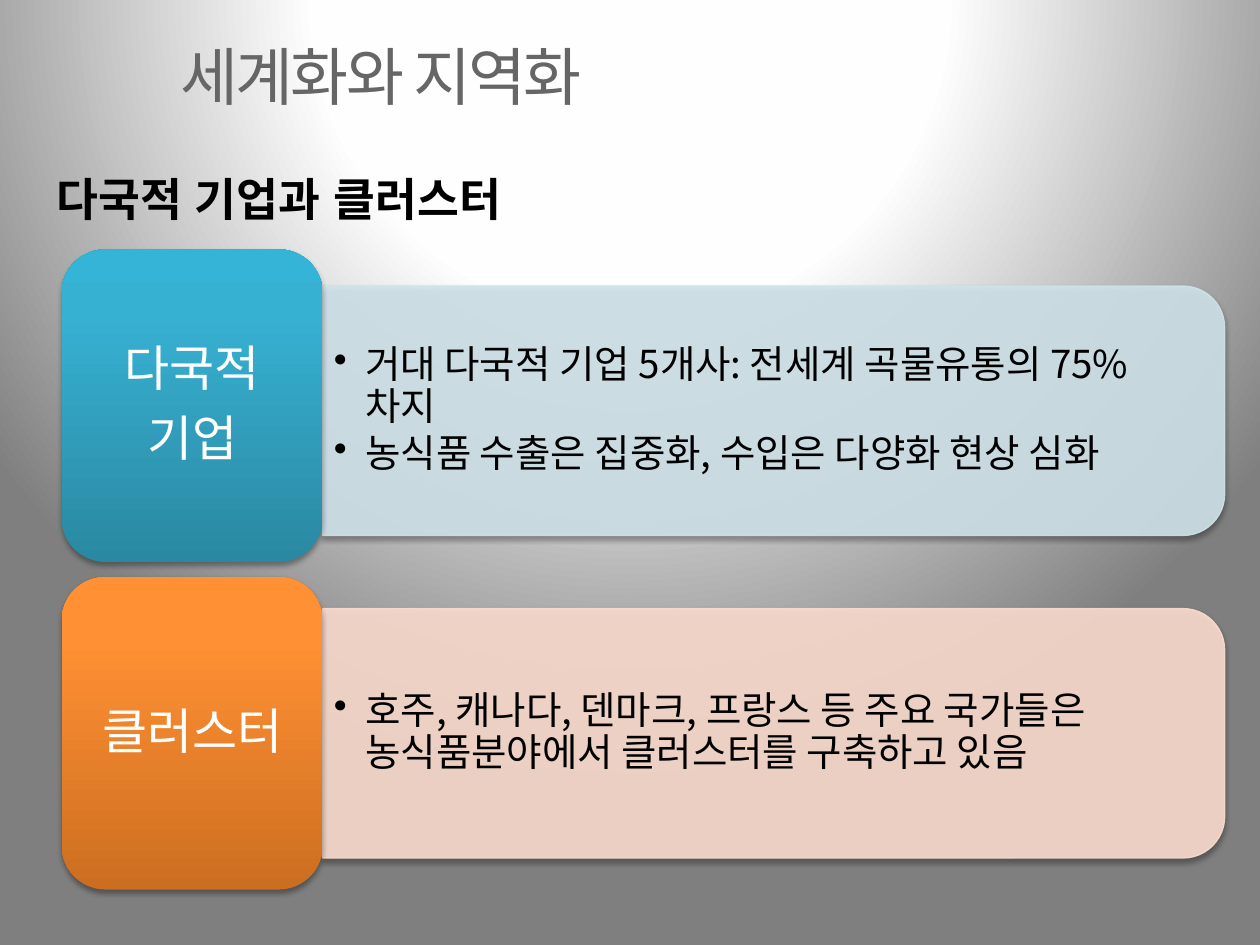
from lxml.etree import SubElement
from pptx import Presentation
from pptx.dml.color import RGBColor
from pptx.enum.shapes import MSO_SHAPE
from pptx.enum.text import MSO_ANCHOR, PP_ALIGN
from pptx.oxml import parse_xml
from pptx.oxml.ns import nsdecls, qn
from pptx.util import Inches, Pt

FONT = "Noto Sans CJK KR"
LABEL_LEFT, LABEL_WIDTH, LABEL_HEIGHT = 0.49, 2.07, 2.48
BAR_LEFT, BAR_WIDTH, BAR_HEIGHT = LABEL_LEFT + LABEL_WIDTH, 7.16, 1.98

# label centre, bar centre, label lines, label gradient, bar colour, bullets
ROWS = [
    (3.22, 3.26, ["다국적", "기업"],
     [(0, "2A88A2"), (80, "37B1D2"), (100, "34B4D6")], "D0E3EA",
     ["거대 다국적 기업 5개사: 전세계 곡물유통의 75% 차지",
      "농식품 수출은 집중화, 수입은 다양화 현상 심화"]),
    (5.82, 5.82, ["클러스터"],
     [(0, "CC6E20"), (80, "FF9034"), (100, "FF9136")], "FCDDCF",
     ["호주, 캐나다, 덴마크, 프랑스 등 주요 국가들은 "
      "농식품분야에서 클러스터를 구축하고 있음"]),
]


def color(value):
    return RGBColor.from_string(value)


def set_gradient(fill, parent, stops, direction):
    """Fill with any number of stops; direction is the a:lin or a:path XML."""
    fill.solid()
    stop_xml = "".join(
        f'<a:gs pos="{position * 1000}"><a:srgbClr val="{value}"/></a:gs>'
        for position, value in stops)
    gradient = parse_xml(
        f'<a:gradFill {nsdecls("a")} rotWithShape="1">'
        f"<a:gsLst>{stop_xml}</a:gsLst>{direction}</a:gradFill>")
    parent.replace(parent.find(qn("a:solidFill")), gradient)


def set_background(slide):
    fill = slide.background.fill
    fill.solid()
    set_gradient(
        fill, slide.element.find(".//" + qn("p:bgPr")),
        [(0, "FFFFFF"), (40, "FEFEFE"), (100, "7F7F7F")],
        '<a:path path="circle"><a:fillToRect l="50000" t="-80000" '
        'r="50000" b="180000"/></a:path>')


def add_shadow(shape):
    shape.shadow.inherit = False
    effects = shape.element.spPr.find(qn("a:effectLst"))
    effects.append(parse_xml(
        f'<a:outerShdw {nsdecls("a")} blurRad="{Pt(3.1)}" dist="{Pt(1.8)}" '
        'dir="5400000" rotWithShape="0"><a:srgbClr val="000000">'
        '<a:alpha val="35000"/></a:srgbClr></a:outerShdw>'))


def format_runs(paragraph, size, value, name=FONT, bold=False):
    for run in paragraph.runs:
        font = run.font
        font.size, font.name, font.bold = Pt(size), name, bold
        font.color.rgb = color(value)
        SubElement(run._r.get_or_add_rPr(), qn("a:ea"), typeface=name)


def add_text(slide, left, top, width, height, lines, size, value,
             name=FONT, bold=False, anchor=MSO_ANCHOR.TOP):
    box = slide.shapes.add_textbox(
        Inches(left), Inches(top), Inches(width), Inches(height))
    frame = box.text_frame
    frame.word_wrap = True
    frame.vertical_anchor = anchor
    frame.text = "\n".join(lines)
    for paragraph in frame.paragraphs:
        format_runs(paragraph, size, value, name, bold)
    return frame


def set_spacing(paragraph, after_percent):
    paragraph.line_spacing = 0.9
    after = SubElement(paragraph._p.get_or_add_pPr(), qn("a:spcAft"))
    SubElement(after, qn("a:spcPct"), val=str(after_percent * 1000))


def add_bullet(paragraph):
    paragraph.level = 1
    properties = paragraph._p.get_or_add_pPr()
    properties.set("marL", str(Inches(0.25)))
    properties.set("indent", str(-Inches(0.25)))
    SubElement(properties, qn("a:buChar"), char="•")


def add_bar(slide, center, value, bullets):
    """Bar rounded at its right end: an upright shape turned by 90 degrees."""
    middle = BAR_LEFT + BAR_WIDTH / 2
    bar = slide.shapes.add_shape(
        MSO_SHAPE.ROUND_2_SAME_RECTANGLE,
        Inches(middle - BAR_HEIGHT / 2), Inches(center - BAR_WIDTH / 2),
        Inches(BAR_HEIGHT), Inches(BAR_WIDTH))
    bar.rotation = 90
    bar.fill.solid()
    bar.fill.fore_color.rgb = color(value)
    bar.line.color.rgb = color(value)
    bar.line.width = Pt(0.75)
    for paint in bar.element.spPr.iter(qn("a:srgbClr")):
        SubElement(paint, qn("a:alpha"), val="90000")
    add_shadow(bar)

    inset = 0.1
    height = BAR_HEIGHT - 2 * inset
    frame = add_text(slide, BAR_LEFT, center - height / 2, BAR_WIDTH - inset,
                     height, bullets, 22, "000000", anchor=MSO_ANCHOR.MIDDLE)
    frame.margin_left = frame.margin_right = Inches(0.09)
    for paragraph in frame.paragraphs:
        set_spacing(paragraph, 15)
        add_bullet(paragraph)


def add_label(slide, center, lines, stops):
    top = center - LABEL_HEIGHT / 2
    label = slide.shapes.add_shape(
        MSO_SHAPE.ROUNDED_RECTANGLE, Inches(LABEL_LEFT), Inches(top),
        Inches(LABEL_WIDTH), Inches(LABEL_HEIGHT))
    set_gradient(label.fill, label.element.spPr, stops,
                 '<a:lin ang="16200000" scaled="0"/>')
    label.line.fill.background()
    add_shadow(label)

    inset = 0.1
    frame = add_text(slide, LABEL_LEFT + inset, top + inset,
                     LABEL_WIDTH - 2 * inset, LABEL_HEIGHT - 2 * inset,
                     lines, 28, "FFFFFF", anchor=MSO_ANCHOR.MIDDLE)
    frame.margin_left = frame.margin_right = Inches(0.12)
    frame.margin_top = frame.margin_bottom = Inches(0.06)
    for paragraph in frame.paragraphs:
        paragraph.alignment = PP_ALIGN.CENTER
        set_spacing(paragraph, 35)


def set_title(slide, text):
    title = slide.shapes.title
    title.left, title.top = Inches(1.33), Inches(0.16)
    title.width, title.height = Inches(8.67), Inches(0.87)
    frame = title.text_frame
    frame.text = text
    frame.vertical_anchor = MSO_ANCHOR.MIDDLE
    paragraph = frame.paragraphs[0]
    paragraph.alignment = PP_ALIGN.LEFT
    format_runs(paragraph, 36, "666666")
    paragraph.runs[0]._r.get_or_add_rPr().set("spc", "-150")


def main():
    presentation = Presentation()
    presentation.slide_width, presentation.slide_height = Inches(10), Inches(7.5)
    slide = presentation.slides.add_slide(presentation.slide_layouts[5])
    set_background(slide)
    set_title(slide, "세계화와 지역화")
    add_text(slide, 0.35, 1.31, 9.21, 0.54, ["다국적 기업과 클러스터"],
             26, "000000", name="Arial", bold=True)
    for label_center, bar_center, lines, stops, value, bullets in ROWS:
        add_bar(slide, bar_center, value, bullets)
        add_label(slide, label_center, lines, stops)
    presentation.save("out.pptx")


if __name__ == "__main__":
    main()
